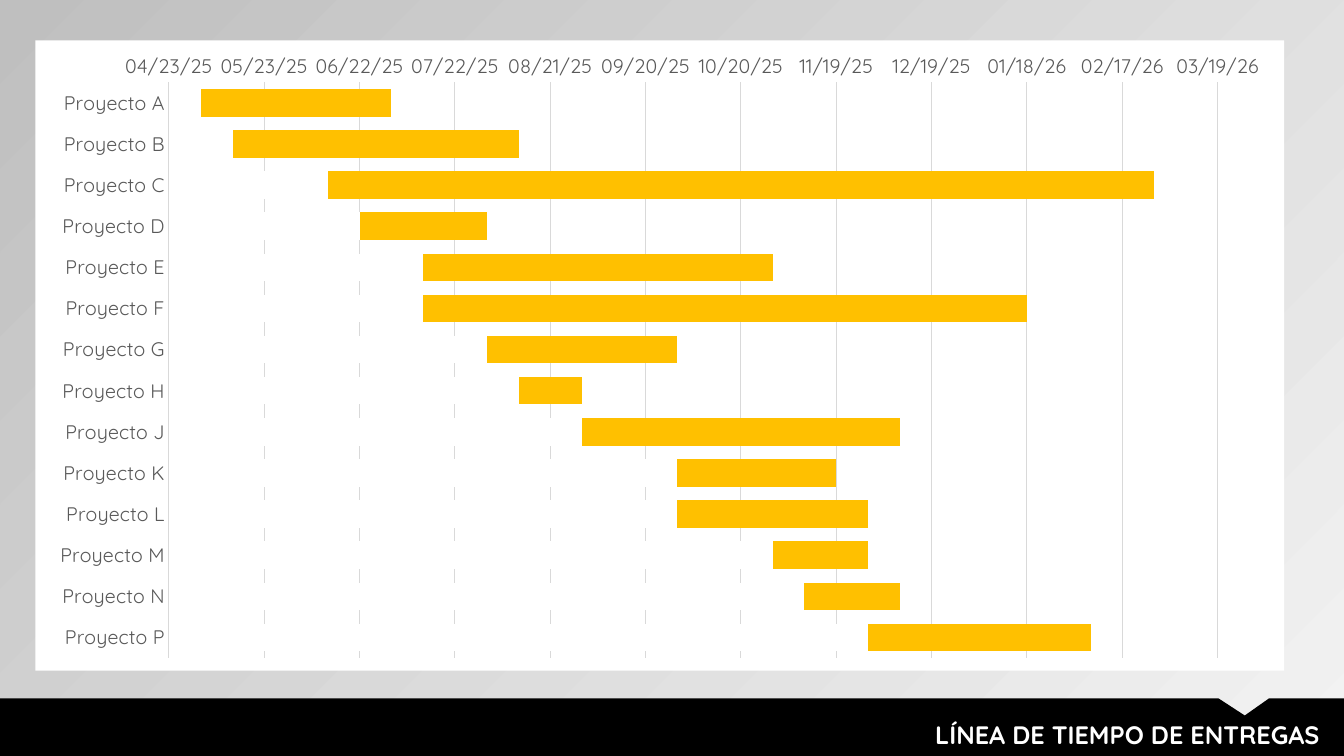
from lxml import etree
from pptx import Presentation
from pptx import util as u
from pptx.chart import data as chart_data
from pptx.dml import color
from pptx.enum import chart as chart_enum, text
from pptx.oxml import ns

FONT = "Quicksand"
COLORS = {"bar": "FFC000", "white": "FFFFFF", "black": "000000", "label": "595959",
          "grid": "D9D9D9", "light": "F2F2F2", "dark": "BFBFBF"}

# name, first day and last day as serial dates
PROJECTS = [
    ("Proyecto A", 45780, 45840), ("Proyecto B", 45790, 45880), ("Proyecto C", 45820, 46080),
    ("Proyecto D", 45830, 45870), ("Proyecto E", 45850, 45960), ("Proyecto F", 45850, 46040),
    ("Proyecto G", 45870, 45930), ("Proyecto H", 45880, 45900), ("Proyecto J", 45900, 46000),
    ("Proyecto K", 45930, 45980), ("Proyecto L", 45930, 45990), ("Proyecto M", 45960, 45990),
    ("Proyecto N", 45970, 46000), ("Proyecto P", 45990, 46060),
]


def rgb(name):
    return color.RGBColor.from_string(COLORS[name])


def style_font(font, size, name):
    font.name = FONT
    font.size = u.Pt(size)
    font.color.rgb = rgb(name)


deck = Presentation()
deck.slide_width, deck.slide_height = u.Cm(33.87), u.Cm(19.05)
page = deck.slides.add_slide(deck.slide_layouts[5])

# Background
backdrop = page.background.fill
backdrop.gradient()
backdrop.gradient_angle = 135
for stop, name, position in zip(backdrop.gradient_stops, ("light", "dark"), (0, 1)):
    stop.color.rgb = rgb(name)
    stop.position = position

# Title on a notched black band
title = page.shapes.title
title.left, title.top, title.width, title.height = u.Cm(10.5), u.Cm(18), u.Cm(23.01), u.Cm(1.02)
frame = title.text_frame
frame.text = "LÍNEA DE TIEMPO DE ENTREGAS"
frame.word_wrap = True
frame.auto_size = text.MSO_AUTO_SIZE.SHAPE_TO_FIT_TEXT
frame.vertical_anchor = text.MSO_ANCHOR.TOP
para = frame.paragraphs[0]
para.alignment = text.PP_ALIGN.RIGHT
style_font(para.runs[0].font, 18, "white")
para.runs[0].font.bold = True

outline = [(30.71, 17.6), (31.37, 18.03), (31.98, 17.6), (33.87, 17.6), (33.87, 19.05), (0, 19.05)]
builder = page.shapes.build_freeform(u.Cm(0), u.Cm(17.6))
builder.add_line_segments([(u.Cm(x), u.Cm(y)) for x, y in outline], close=True)
band = builder.convert_to_shape()
band.shadow.inherit = False
band.fill.solid()
band.fill.fore_color.rgb = rgb("black")
band.line.fill.background()
title.element.addprevious(band.element)

# Gantt chart: white bars cover the yellow ones up to each start date
dates = chart_data.CategoryChartData()
dates.categories = [name for name, _, _ in PROJECTS]
dates.add_series("Series 1", [end for _, _, end in PROJECTS])
dates.add_series("Series 2", [start for _, start, _ in PROJECTS])
chart = page.shapes.add_chart(chart_enum.XL_CHART_TYPE.BAR_CLUSTERED, u.Cm(0.89), u.Cm(1.02),
                              u.Cm(31.47), u.Cm(15.88), dates).chart
chart.has_legend = False
chart.has_title = False
style_font(chart.font, 14, "black")

area = etree.fromstring(
    '<c:spPr xmlns:c="http://schemas.openxmlformats.org/drawingml/2006/chart"'
    ' xmlns:a="http://schemas.openxmlformats.org/drawingml/2006/main"><a:solidFill>'
    f'<a:srgbClr val="{COLORS["white"]}"/></a:solidFill><a:ln><a:noFill/></a:ln></c:spPr>'
)
chart.element.find(ns.qn("c:txPr")).addprevious(area)

plot = chart.plots[0]
plot.gap_width = 50
plot.overlap = 100
for series, name in zip(plot.series, ("bar", "white")):
    series.format.fill.solid()
    series.format.fill.fore_color.rgb = rgb(name)

project_axis, date_axis = chart.category_axis, chart.value_axis
for axis in (project_axis, date_axis):
    axis.major_tick_mark = axis.minor_tick_mark = chart_enum.XL_TICK_MARK.NONE
    style_font(axis.tick_labels.font, 14, "label")

project_axis.reverse_order = True
date_axis.minimum_scale = 45770
date_axis.maximum_scale = 46100
date_axis.major_unit = 30
date_axis.tick_labels.number_format = "mm/dd/yy;@"
date_axis.tick_labels.number_format_is_linked = False
date_axis.format.line.fill.background()
for line in (project_axis.format.line, date_axis.major_gridlines.format.line):
    line.color.rgb = rgb("grid")
    line.width = u.Pt(0.75)

deck.save("out.pptx")
